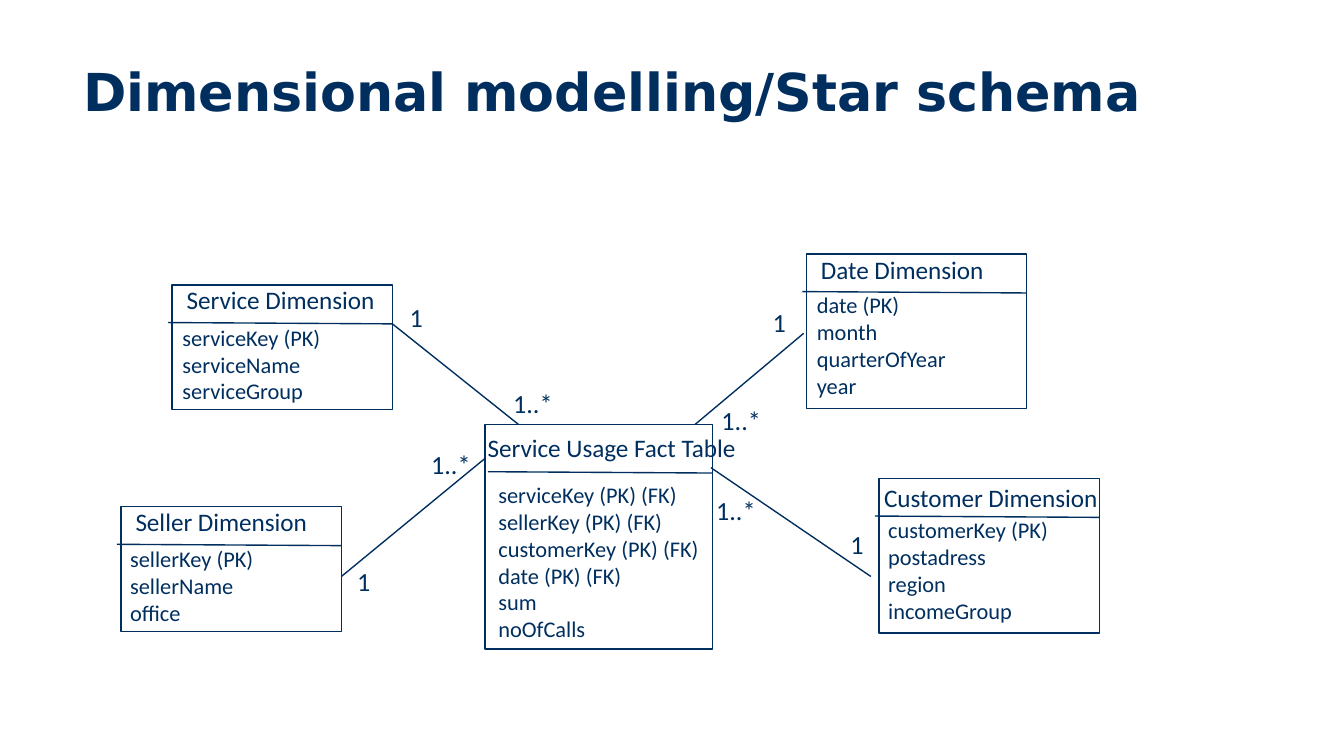
from dataclasses import dataclass

from lxml import etree
from pptx import Presentation
from pptx.dml.color import RGBColor
from pptx.enum.shapes import MSO_CONNECTOR as CONN, MSO_SHAPE as SHAPE
from pptx.enum.text import MSO_ANCHOR as ANCHOR, MSO_AUTO_SIZE as FIT
from pptx.oxml.ns import qn
from pptx.util import Inches, Pt


@dataclass(frozen=True)
class Theme:
    ink: RGBColor = RGBColor(0x00, 0x2F, 0x5F)
    paper: RGBColor = RGBColor(0xFF, 0xFF, 0xFF)
    title_font: str = "DejaVu Sans"
    body_font: str = "Calibri"
    title: float = 28
    heading: float = 13.5
    label: float = 14
    field: float = 12
    line: float = 0.75


class Diagram:
    def __init__(self, slide, theme):
        self.s = slide
        self.theme = theme

    def text(self, x, y, w, h, text, size, wrap=False):
        sp = self.s.shapes.add_textbox(Inches(x), Inches(y), Inches(w), Inches(h))
        tf = sp.text_frame
        tf.text = text
        tf.word_wrap = wrap
        tf.auto_size = FIT.SHAPE_TO_FIT_TEXT
        for p in tf.paragraphs:
            for r in p.runs:
                r.font.name = self.theme.body_font
                r.font.size = Pt(size)
                r.font.color.rgb = self.theme.ink
        return sp

    def title(self, text):
        sp = self.text(0.52, 0.38, 9.28, 0.65, text, self.theme.title, wrap=True)
        tf = sp.text_frame
        tf.auto_size = FIT.NONE
        tf.vertical_anchor = ANCHOR.MIDDLE
        p = tf.paragraphs[0]
        p.line_spacing = 0.9
        p.runs[0].font.name = self.theme.title_font
        p.runs[0].font.bold = True

    def box(self, x, y, w, h):
        sp = self.s.shapes.add_shape(SHAPE.RECTANGLE, Inches(x), Inches(y), Inches(w), Inches(h))
        sp.shadow.inherit = False
        sp.fill.solid()
        sp.fill.fore_color.rgb = self.theme.paper
        sp.line.color.rgb = self.theme.ink
        sp.line.width = Pt(self.theme.line)

    def line(self, x1, y1, x2, y2):
        c = self.s.shapes.add_connector(CONN.STRAIGHT, Inches(x1), Inches(y1), Inches(x2), Inches(y2))
        c.line.color.rgb = self.theme.ink
        c.line.width = Pt(self.theme.line)
        etree.SubElement(c._element.spPr, qn("a:effectLst"))

    def entity(self, x, y, w, h, name, fields, fields_w,
               name_at=(0.01, -0.05), name_w=1.79, rule_at=(-0.03, 0.28), fields_at=(-0.03, 0.23)):
        """A table box; the part positions are offsets from its top left corner."""
        self.box(x, y, w, h)
        self.text(x + name_at[0], y + name_at[1], name_w, 0.33, name, self.theme.heading, wrap=True)
        rule_y = y + rule_at[1]
        self.line(x + rule_at[0], rule_y, x + w, rule_y + 0.01)
        self.text(x + fields_at[0], y + fields_at[1], fields_w, 0.31 + 0.2 * len(fields),
                  "\n".join(fields), self.theme.field)

    def multiplicity(self, x, y, text):
        self.text(x, y, 0.3 if text == "1" else 0.5, 0.34, text, self.theme.label)


def main():
    prs = Presentation()
    prs.slide_width = Inches(10)
    prs.slide_height = prs.slide_width * 9 // 16
    d = Diagram(prs.slides.add_slide(prs.slide_layouts[6]), Theme())

    d.title("Dimensional modelling/Star schema")

    # Dimension tables
    d.entity(1.28, 2.12, 1.64, 0.93, "Service Dimension",
             ["serviceKey (PK)", "serviceName", "serviceGroup"], 1.24, fields_at=(-0.02, 0.24))
    d.entity(0.9, 3.77, 1.64, 0.93, "Seller Dimension",
             ["sellerKey (PK)", "sellerName", "office"], 1.14, fields_at=(-0.03, 0.24))
    d.entity(6, 1.89, 1.64, 1.15, "Date Dimension",
             ["date (PK)", "month", "quarterOfYear", "year"], 1.17, fields_at=(-0.02, 0.23))
    d.entity(6.54, 3.56, 1.64, 1.15, "Customer Dimension",
             ["customerKey (PK)", "postadress", "region", "incomeGroup"], 1.41,
             name_at=(-0.06, -0.02), name_w=2.02)

    # Fact table
    d.entity(3.61, 3.16, 1.69, 1.67, "Service Usage Fact Table",
             ["serviceKey (PK) (FK)", "sellerKey (PK) (FK)", "customerKey (PK) (FK)",
              "date (PK) (FK)", "sum", "noOfCalls"], 1.71,
             name_at=(-0.08, 0.01), name_w=3.12, rule_at=(0.02, 0.35), fields_at=(0, 0.37))

    # Relations: line, then the label at the dimension and at the fact table
    relations = [
        ((2.92, 2.41, 3.86, 3.16), (2.95, 2.19), (3.72, 2.83)),
        ((2.54, 4.29, 3.61, 3.41), (2.56, 4.16), (3.11, 3.29)),
        ((5.98, 2.48, 5.17, 3.16), (5.65, 2.23), (5.27, 2.96)),
        ((6.48, 4.29, 5.29, 3.48), (6.23, 3.88), (5.23, 3.63)),
    ]
    for ends, one_at, many_at in relations:
        d.line(*ends)
        d.multiplicity(*one_at, "1")
        d.multiplicity(*many_at, "1..*")

    prs.save("out.pptx")


if __name__ == "__main__":
    main()
